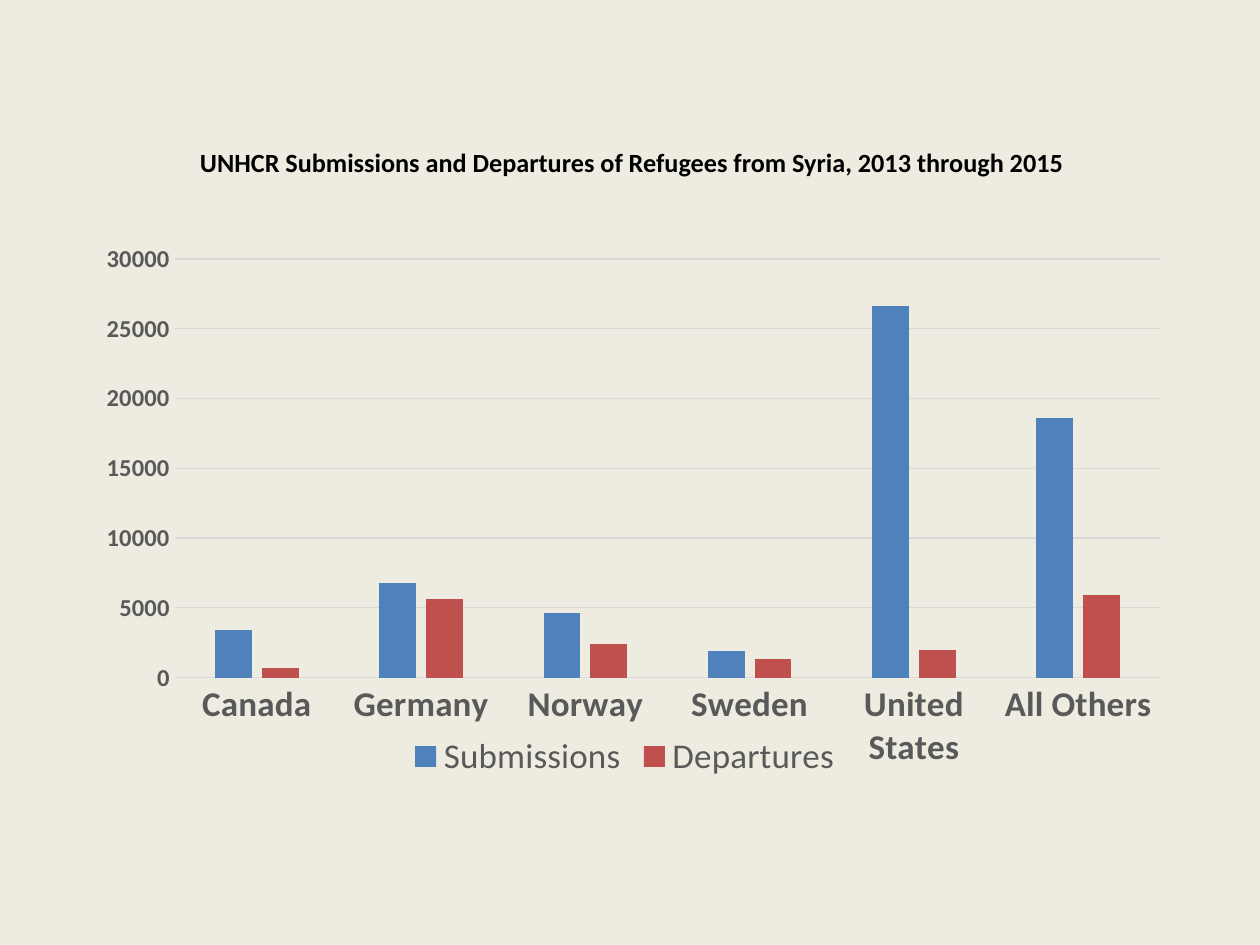
from lxml.etree import SubElement
from pptx import Presentation
from pptx.chart.data import CategoryChartData
from pptx.dml.color import RGBColor
from pptx.enum.chart import XL_CHART_TYPE, XL_LEGEND_POSITION, XL_TICK_MARK
from pptx.enum.text import MSO_ANCHOR, MSO_AUTO_SIZE, PP_ALIGN
from pptx.oxml.ns import qn
from pptx.util import Emu, Pt

PX = 914400 / 126
GREY = "595959"
GRID = "D9D9D9"


def place(*lengths):
    return [Emu(round(length * PX)) for length in lengths]


def style(font, size, color, bold=False):
    font.name = "Calibri"
    font.size = Pt(size)
    font.bold = bold
    font.color.rgb = RGBColor.from_string(color)


deck = Presentation()
deck.slide_width, deck.slide_height = place(1260, 945)
page = deck.slides.add_slide(deck.slide_layouts[5])
page.background.fill.solid()
page.background.fill.fore_color.rgb = RGBColor.from_string("EEECE1")

# Title
title = page.shapes.title
title.left, title.top, title.width, title.height = place(103, 140, 1058, 44)
box = title.text_frame
box.word_wrap = True
box.auto_size = MSO_AUTO_SIZE.NONE
box.vertical_anchor = MSO_ANCHOR.MIDDLE
para = box.paragraphs[0]
para.alignment = PP_ALIGN.CENTER
span = para.add_run()
span.text = "UNHCR Submissions and Departures of Refugees from Syria, 2013 through 2015"
style(span.font, 15, "000000", bold=True)

# Chart data
data = CategoryChartData()
data.categories = ["Canada", "Germany", "Norway", "Sweden", "United States", "All Others"]
data.add_series("Submissions", [3400, 6800, 4600, 1900, 26600, 18600])
data.add_series("Departures", [700, 5600, 2400, 1300, 2000, 5900])
chart = page.shapes.add_chart(
    XL_CHART_TYPE.COLUMN_CLUSTERED, *place(89, 244, 1072, 541), data
).chart
chart.has_title = False
style(chart.font, 10, "000000")

# Columns
plot = chart.plots[0]
plot.vary_by_categories = False
plot.gap_width = 219
plot.overlap = -27
for series, color in zip(plot.series, ["4F81BD", "C0504D"]):
    series.format.fill.solid()
    series.format.fill.fore_color.rgb = RGBColor.from_string(color)

# Axes
countries, refugees = chart.category_axis, chart.value_axis
for axis, size in [(countries, 20), (refugees, 14)]:
    axis.major_tick_mark = axis.minor_tick_mark = XL_TICK_MARK.NONE
    style(axis.tick_labels.font, size, GREY, bold=True)
refugees.minimum_scale = 0
refugees.maximum_scale = 30000
refugees.major_unit = 5000
refugees.format.line.fill.background()
for line in [countries.format.line, refugees.major_gridlines.format.line]:
    line.color.rgb = RGBColor.from_string(GRID)
    line.width = Pt(0.75)

# Legend
chart.has_legend = True
chart.legend.position = XL_LEGEND_POSITION.BOTTOM
chart.legend.include_in_layout = False
style(chart.legend.font, 20, GREY)

# Fixed inner plot area, as fractions of the chart
area = chart.element.find(".//" + qn("c:plotArea"))
layout = area.find(qn("c:layout"))
if layout is None:
    layout = SubElement(area, qn("c:layout"))
    area.insert(0, layout)
manual = SubElement(layout, qn("c:manualLayout"))
for tag, value in [("layoutTarget", "inner"), ("xMode", "edge"), ("yMode", "edge"),
                   ("x", 0.08), ("y", 0.02), ("w", 0.92), ("h", 0.78)]:
    SubElement(manual, qn("c:" + tag)).set("val", str(value))

deck.save("out.pptx")
